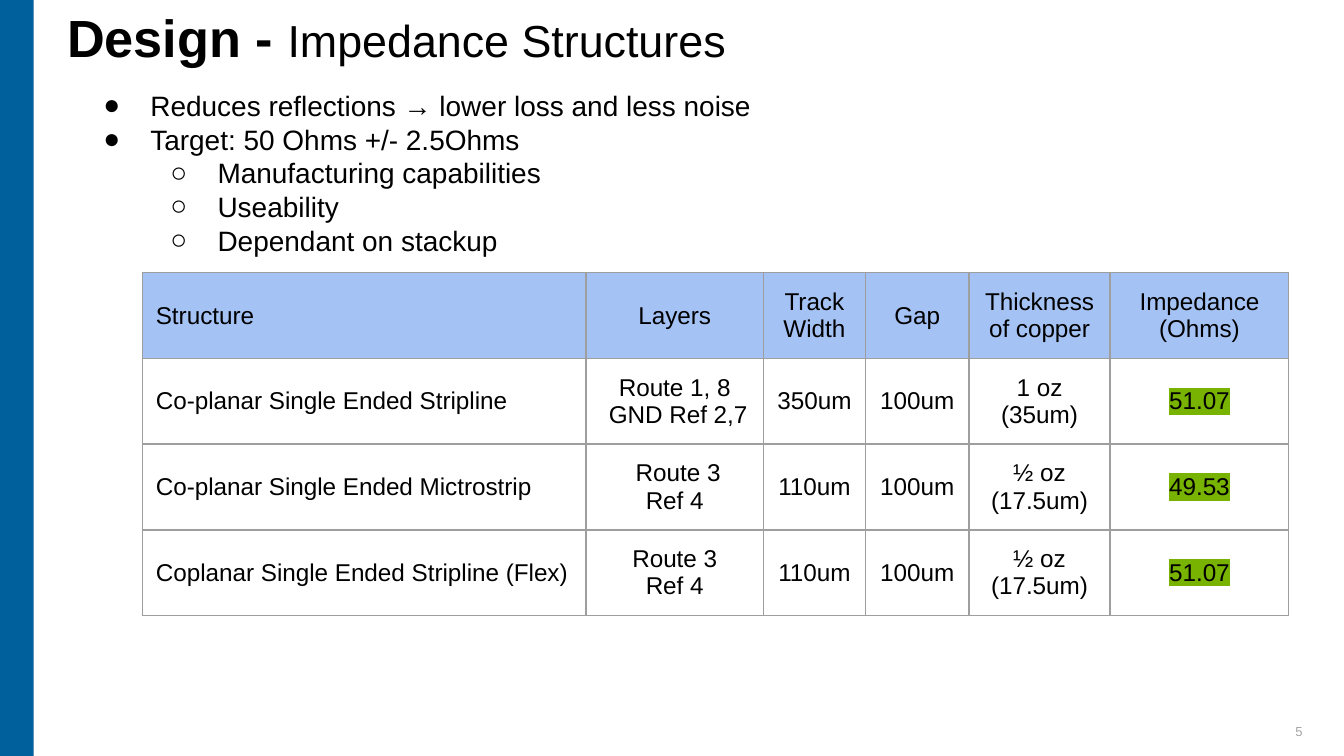
from typing import NamedTuple

from lxml.etree import SubElement
from pptx import Presentation
from pptx.dml.color import RGBColor
from pptx.enum.shapes import MSO_SHAPE as Shape
from pptx.enum.text import MSO_ANCHOR as Anchor, PP_ALIGN as Align
from pptx.oxml.ns import qn
from pptx.util import Inches, Pt

BLACK = "000000"
BLUE = "00609C"
HEAD = "A4C2F4"
WHITE = "FFFFFF"
GREEN = "77B300"
RULE = "9E9E9E"
GREY = "A5A5A5"
WIDE = 10
HIGH = WIDE * 9 / 16


class Point(NamedTuple):
    text: str
    level: int = 0


POINTS = [
    Point("Reduces reflections → lower loss and less noise"),
    Point("Target: 50 Ohms +/- 2.5Ohms"),
    Point("Manufacturing capabilities", 1),
    Point("Useability", 1),
    Point("Dependant on stackup", 1),
]


class Row(NamedTuple):
    height: float
    cells: tuple[str, ...]


WIDTHS = [3.3, 1.32, 0.76, 0.77, 1.05, 1.33]
ROWS = [
    Row(0.64, ("Structure", "Layers", "Track Width", "Gap",
               "Thickness of copper", "Impedance (Ohms)")),
    Row(0.61, ("Co-planar Single Ended Stripline", "Route 1, 8\n GND Ref 2,7",
               "350um", "100um", "1 oz\n(35um)", "51.07")),
    Row(0.64, ("Co-planar Single Ended Mictrostrip", " Route 3\nRef 4",
               "110um", "100um", "½ oz\n(17.5um)", "49.53")),
    Row(0.59, ("Coplanar Single Ended Stripline (Flex)", "Route 3\nRef 4",
               "110um", "100um", "½ oz\n(17.5um)", "51.07")),
]


def color(value: str) -> RGBColor:
    return RGBColor.from_string(value)


def style(font, size: float, tint: str = BLACK, bold: bool = False) -> None:
    font.name = "Arial"
    font.size = Pt(size)
    font.bold = bold
    font.color.rgb = color(tint)


def add_box(slide, left: float, top: float, width: float, height: float,
            inset: float = 0, anchor=Anchor.MIDDLE):
    """Add a wrapping text box and return its frame."""
    box = slide.shapes.add_textbox(
        Inches(left), Inches(top), Inches(width), Inches(height))
    frame = box.text_frame
    frame.word_wrap = True
    frame.vertical_anchor = anchor
    frame.margin_left = frame.margin_right = Inches(inset)
    frame.margin_top = frame.margin_bottom = Inches(inset)
    return frame


def add_tint(parent, tag: str, value: str) -> None:
    """Append an element that holds one colour."""
    node = SubElement(parent, qn(tag))
    SubElement(node, qn("a:srgbClr"), val=value)


def add_bullet(para, level: int) -> None:
    props = para._p.get_or_add_pPr()
    props.set("marL", str(Inches(0.5 * (level + 1))))
    props.set("indent", str(Inches(-0.35)))
    add_tint(props, "a:buClr", BLACK)
    SubElement(props, qn("a:buFont"), typeface="Arial")
    SubElement(props, qn("a:buChar"), char="●○"[level])


def add_points(slide, points: list[Point]) -> None:
    frame = add_box(slide, 0.52, 0.56, 9.12, 4.53, 0.1, Anchor.TOP)
    frame.text = "\n".join(point.text for point in points)
    for para, point in zip(frame.paragraphs, points):
        para.level = point.level
        add_bullet(para, point.level)
        style(para.font, 15)


def add_edges(cell) -> None:
    props = cell._tc.get_or_add_tcPr()
    for side in ("a:lnL", "a:lnR", "a:lnT", "a:lnB"):
        line = SubElement(props, qn(side), w=str(Pt(0.75)))
        add_tint(line, "a:solidFill", RULE)


def fill_cell(cell, text: str, fill: str, align, mark: bool) -> None:
    """Fill one cell; run fonts keep its row from growing."""
    add_edges(cell)
    cell.fill.solid()
    cell.fill.fore_color.rgb = color(fill)
    cell.vertical_anchor = Anchor.MIDDLE
    cell.margin_left = cell.margin_right = Inches(0.1)
    cell.margin_top = cell.margin_bottom = Inches(0.1)
    cell.text_frame.text = text
    for para in cell.text_frame.paragraphs:
        para.alignment = align
        run = para.runs[0]
        if mark:
            add_tint(run._r.get_or_add_rPr(), "a:highlight", GREEN)
        style(run.font, 13)


def add_grid(slide, rows: list[Row], widths: list[float]) -> None:
    table = slide.shapes.add_table(
        len(rows), len(widths), Inches(1.06), Inches(2.03),
        Inches(sum(widths)), Inches(sum(row.height for row in rows))).table
    for column, width in zip(table.columns, widths):
        column.width = Inches(width)
    last = len(widths) - 1
    for r, row in enumerate(rows):
        table.rows[r].height = Inches(row.height)
        for c, text in enumerate(row.cells):
            fill_cell(table.cell(r, c), text, WHITE if r else HEAD,
                      Align.CENTER if c else Align.LEFT, r > 0 and c == last)


def add_title(slide) -> None:
    para = add_box(slide, 0.5, 0, 9, 0.6).paragraphs[0]
    para.line_spacing = 0.9
    for text, size, bold in (("Design - ", 28, True),
                             ("Impedance Structures", 24, False)):
        run = para.add_run()
        run.text = text
        style(run.font, size, bold=bold)


def add_number(slide) -> None:
    para = add_box(slide, 9.38, 5.38, 0.57, 0.12).paragraphs[0]
    para.text = "5"
    para.alignment = Align.CENTER
    style(para.font, 7, GREY)


def add_band(slide) -> None:
    band = slide.shapes.add_shape(
        Shape.RECTANGLE, 0, 0, Inches(0.25), Inches(HIGH))
    band.shadow.inherit = False
    band.fill.solid()
    band.fill.fore_color.rgb = color(BLUE)
    band.line.fill.background()


def main() -> None:
    deck = Presentation()
    deck.slide_width = Inches(WIDE)
    deck.slide_height = Inches(HIGH)
    slide = deck.slides.add_slide(deck.slide_layouts[6])
    add_band(slide)
    add_title(slide)
    add_number(slide)
    add_points(slide, POINTS)
    add_grid(slide, ROWS, WIDTHS)
    deck.save("out.pptx")


if __name__ == "__main__":
    main()
